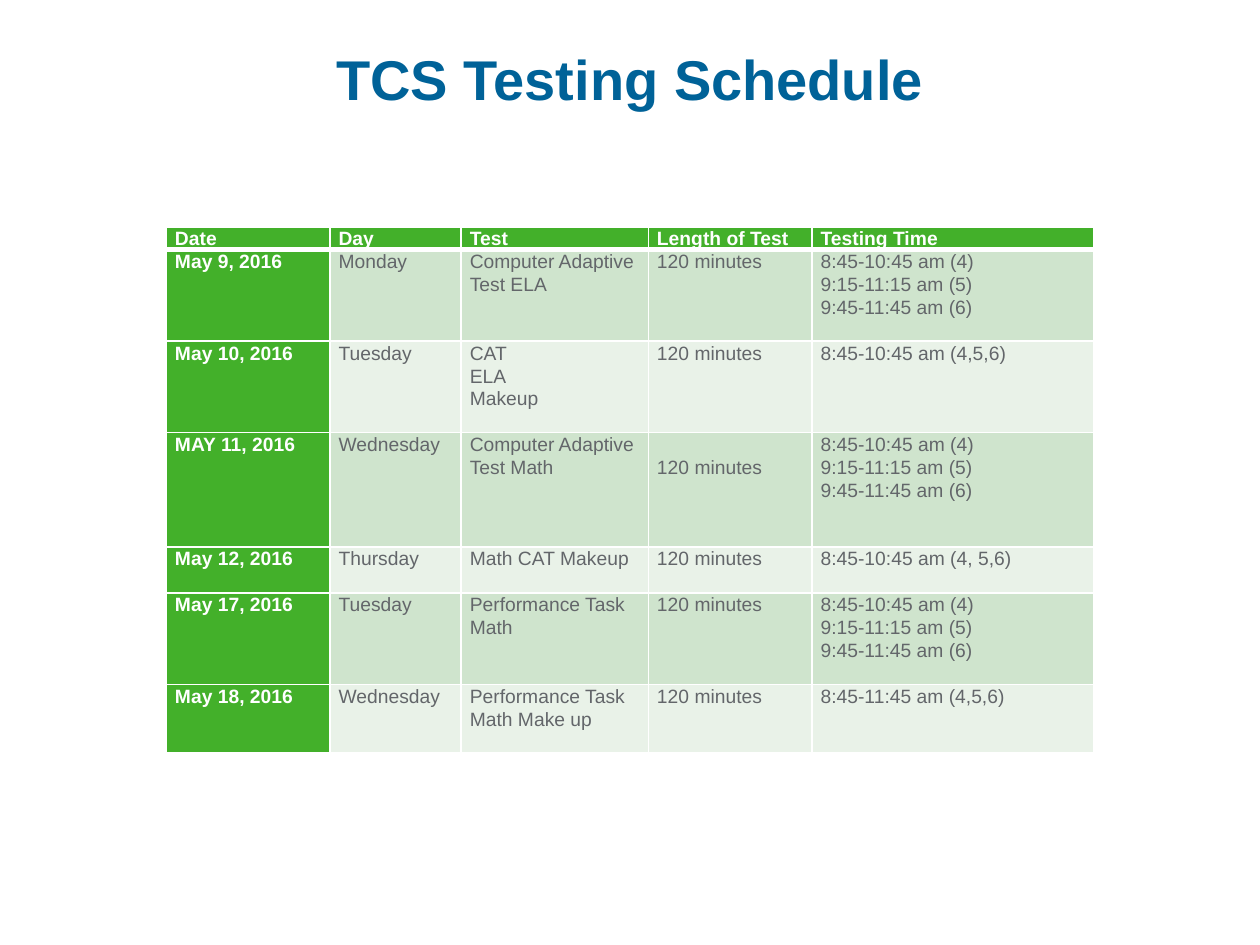
"""Build the TCS testing schedule slide."""
from lxml import etree
from pptx import Presentation
from pptx.dml.color import RGBColor
from pptx.enum import text
from pptx.oxml.ns import qn
from pptx.util import Pt

TITLE = "TCS Testing Schedule"
HEADER = ["Date", "Day", "Test", "Length of Test", "Testing Time"]
LENGTH = "120 minutes"
STAGGERED = "8:45-10:45 am (4)\n9:15-11:15 am (5)\n9:45-11:45 am (6)"
ROWS = [
    HEADER,
    ["May 9, 2016", "Monday", "Computer Adaptive Test ELA", LENGTH, STAGGERED],
    ["May 10, 2016", "Tuesday", "CAT\nELA\nMakeup", LENGTH, "8:45-10:45 am (4,5,6)"],
    ["MAY 11, 2016", "Wednesday", "Computer Adaptive Test Math", LENGTH, STAGGERED],
    ["May 12, 2016", "Thursday", "Math CAT Makeup", LENGTH, "8:45-10:45 am (4, 5,6)"],
    ["May 17, 2016", "Tuesday", "Performance Task Math", LENGTH, STAGGERED],
    ["May 18, 2016", "Wednesday", "Performance Task\nMath Make up", LENGTH,
     "8:45-11:45 am (4,5,6)"],
]
ROW_LINES = [1, 4, 4, 5, 2, 4, 3]
COL_WIDTHS = [93.5, 75, 107, 93.5, 161]
LOWERED_CELL = (3, 3)
LEFT, TOP, LINE = 95, 129.6, 13.07
BLUE, GREEN, WHITE, GREY = "006298", "43B02A", "FFFFFF", "63666A"
BANDS = ["E9F2E8", "CFE4CD"]


def rgb(value):
    return RGBColor.from_string(value)


def write(tf, content, size=11, color=GREY, bold=False, align=None, spacing=None):
    for i, line in enumerate(content.split("\n")):
        p = tf.paragraphs[0] if i == 0 else tf.add_paragraph()
        p.alignment, p.line_spacing = align, spacing
        r = p.add_run()
        r.text = line
        r.font.name, r.font.size, r.font.bold = "Arial", Pt(size), bold
        r.font.color.rgb = rgb(color)


def set_borders(cell, **widths):
    tc_pr = cell._tc.get_or_add_tcPr()
    for side in "LRTB":
        ln = etree.SubElement(tc_pr, qn(f"a:ln{side}"), w=str(Pt(widths.get(side, 1))))
        fill = etree.SubElement(ln, qn("a:solidFill"))
        etree.SubElement(fill, qn("a:srgbClr"), val=WHITE)


def add_title(s):
    sp = s.shapes.title
    sp.left, sp.top, sp.width, sp.height = Pt(36), Pt(21.6), Pt(648), Pt(90)
    sp.text_frame.vertical_anchor = text.MSO_ANCHOR.TOP
    write(sp.text_frame, TITLE, size=32, color=BLUE, bold=True,
          align=text.PP_ALIGN.CENTER)


def format_cell(cell, row, col, content):
    strong = row == 0 or col == 0
    set_borders(cell, T=3 if row == 1 else 1, B=3 if row == 0 else 1)
    cell.fill.solid()
    cell.fill.fore_color.rgb = rgb(GREEN if strong else BANDS[row % 2])
    cell.margin_left = cell.margin_right = Pt(5)
    cell.margin_top = Pt(LINE if (row, col) == LOWERED_CELL else 0)
    cell.margin_bottom = Pt(0)
    write(cell.text_frame, content, color=WHITE if strong else GREY,
          bold=strong, spacing=1.07)


def add_schedule(s):
    table = s.shapes.add_table(len(ROWS), len(HEADER), Pt(LEFT), Pt(TOP),
                               Pt(sum(COL_WIDTHS)), Pt(sum(ROW_LINES) * LINE)).table
    table.first_row = table.horz_banding = False
    for column, width in zip(table.columns, COL_WIDTHS):
        column.width = Pt(width)
    for row, (values, lines) in enumerate(zip(ROWS, ROW_LINES)):
        table.rows[row].height = Pt(lines * LINE)
        for col, content in enumerate(values):
            format_cell(table.cell(row, col), row, col, content)


def main():
    prs = Presentation()
    prs.slide_width, prs.slide_height = Pt(720), Pt(540)
    s = prs.slides.add_slide(prs.slide_layouts[5])
    add_title(s)
    add_schedule(s)
    prs.save("out.pptx")


if __name__ == "__main__":
    main()
